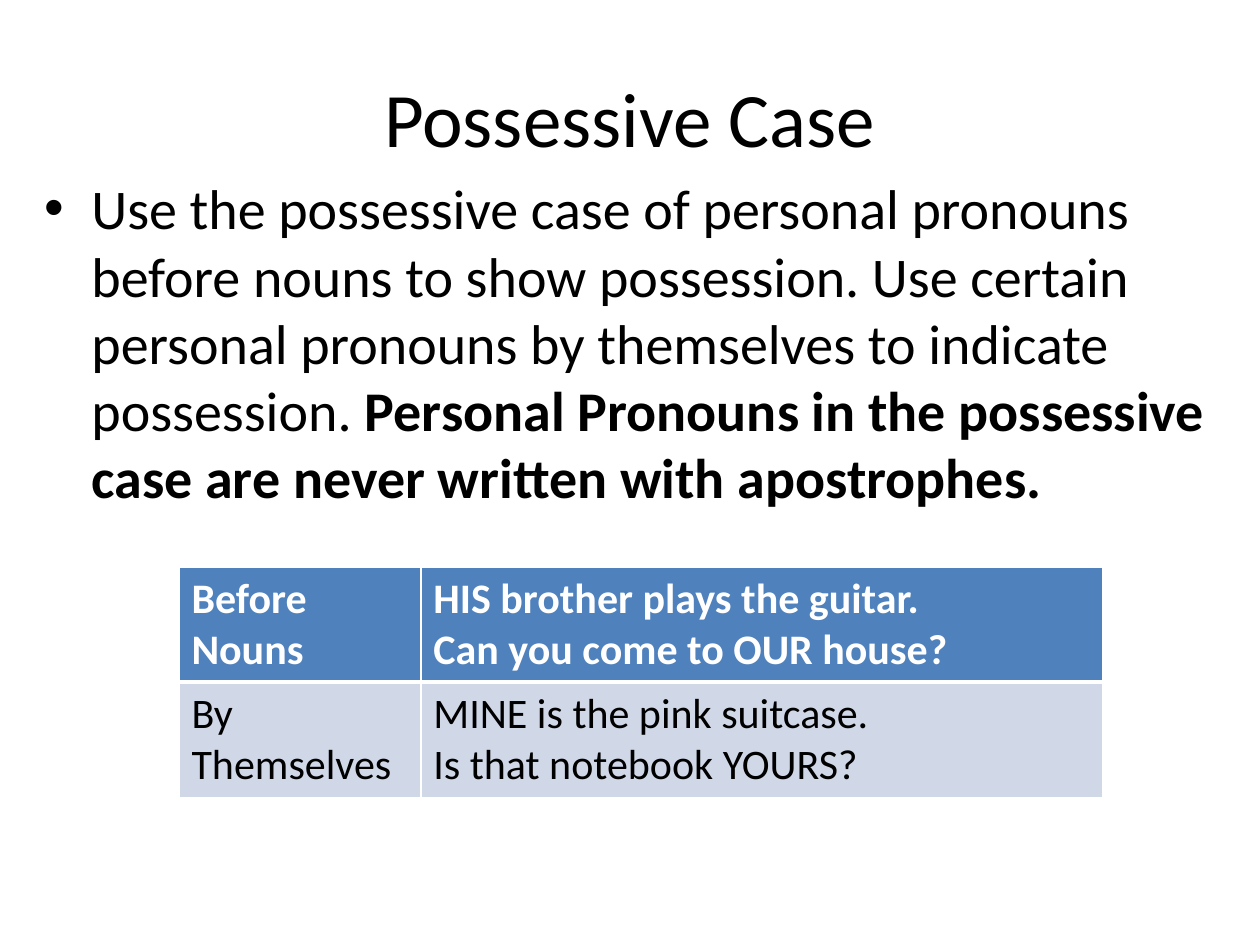
from dataclasses import dataclass

from lxml.etree import SubElement
from pptx import Presentation
from pptx.dml.color import RGBColor
from pptx.enum.text import MSO_ANCHOR, MSO_AUTO_SIZE, PP_ALIGN
from pptx.oxml.ns import qn
from pptx.util import Inches, Pt


@dataclass(frozen=True)
class Theme:
    font: str = "Calibri"
    ink: str = "000000"
    white: str = "FFFFFF"
    head: str = "4F81BD"
    band: str = "D0D8E8"
    title: int = 44
    body: int = 32
    cell: int = 24
    thin: int = 1
    thick: int = 3


@dataclass(frozen=True)
class Row:
    label: str
    lines: str
    fill: str
    ink: str
    bold: bool
    edges: dict[str, int]


LOOK = Theme()
THIN = {side: LOOK.thin for side in ("lnL", "lnR", "lnT", "lnB")}
ROWS = [
    Row("Before Nouns",
        "HIS brother plays the guitar.\nCan you come to OUR house?",
        LOOK.head, LOOK.white, True, THIN | {"lnB": LOOK.thick}),
    Row("By Themselves",
        "MINE is the pink suitcase.\nIs that notebook YOURS?",
        LOOK.band, LOOK.ink, False, THIN | {"lnT": LOOK.thick}),
]
RULE = (
    ("Use the possessive case of personal pronouns before nouns to show "
     "possession. Use certain personal pronouns by themselves to indicate "
     "possession. ", False),
    ("Personal Pronouns in the possessive case are never written with "
     "apostrophes.", True),
)


def style(run, size: int, color: str, bold: bool = False) -> None:
    run.font.name = LOOK.font
    run.font.size = Pt(size)
    run.font.bold = bold
    run.font.color.rgb = RGBColor.from_string(color)


def place(shape, left: float, top: float, width: float, height: float) -> None:
    shape.left, shape.top = Inches(left), Inches(top)
    shape.width, shape.height = Inches(width), Inches(height)
    shape.text_frame.auto_size = MSO_AUTO_SIZE.NONE


def border(cell, edges: dict[str, int]) -> None:
    props = cell._tc.get_or_add_tcPr()
    for side, width in edges.items():
        line = SubElement(props, qn(f"a:{side}"), w=str(Pt(width)))
        fill = SubElement(line, qn("a:solidFill"))
        SubElement(fill, qn("a:srgbClr"), val=LOOK.white)


def draw_cell(cell, text: str, row: Row) -> None:
    border(cell, row.edges)
    cell.fill.solid()
    cell.fill.fore_color.rgb = RGBColor.from_string(row.fill)
    cell.text_frame.text = text
    for para in cell.text_frame.paragraphs:
        for run in para.runs:
            style(run, LOOK.cell, row.ink, row.bold)


def draw_title(shape) -> None:
    place(shape, 0.5, 0.3, 9, 1.25)
    frame = shape.text_frame
    frame.text = "Possessive Case"
    frame.vertical_anchor = MSO_ANCHOR.MIDDLE
    para = frame.paragraphs[0]
    para.alignment = PP_ALIGN.CENTER
    style(para.runs[0], LOOK.title, LOOK.ink)


def draw_body(shape) -> None:
    place(shape, 0.25, 1.33, 9.75, 5.37)
    para = shape.text_frame.paragraphs[0]
    for text, bold in RULE:
        run = para.add_run()
        run.text = text
        style(run, LOOK.body, LOOK.ink, bold)


def draw_table(slide) -> None:
    frame = slide.shapes.add_table(
        len(ROWS), 2, Inches(1.42), Inches(4.5), Inches(7.33), Inches(1.8))
    table = frame.table
    for col, width in zip(table.columns, (1.92, 5.41)):
        col.width = Inches(width)
    for index, row in enumerate(ROWS):
        for col, text in enumerate((row.label, row.lines)):
            draw_cell(table.cell(index, col), text, row)


def main() -> None:
    deck = Presentation()
    deck.slide_width, deck.slide_height = Inches(10), Inches(7.5)
    slide = deck.slides.add_slide(deck.slide_layouts[1])
    draw_title(slide.shapes.title)
    draw_body(slide.placeholders[1])
    draw_table(slide)
    deck.save("out.pptx")


if __name__ == "__main__":
    main()
